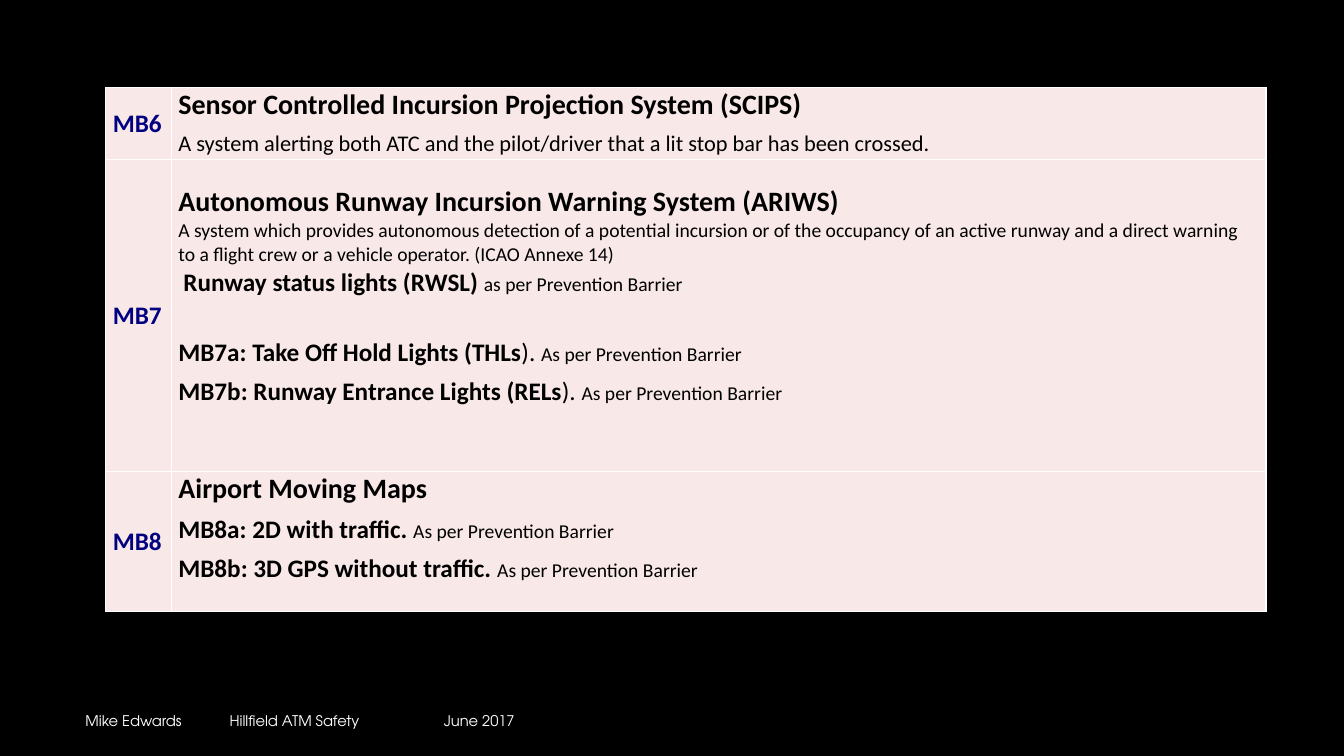
from dataclasses import dataclass

from lxml.etree import SubElement
from pptx import Presentation
from pptx.dml.color import RGBColor
from pptx.enum.text import MSO_ANCHOR, PP_ALIGN
from pptx.oxml.ns import qn
from pptx.util import Pt

BLACK, WHITE, NAVY, PINK = "000000", "FFFFFF", "000080", "F9E8E8"
COLUMN_WIDTHS = (46.8, 781.92)
ROW_HEIGHTS = (51.12, 223.2, 100.08)


@dataclass
class Line:
    """A paragraph of (text, size, bold) phrases with its spacing."""

    phrases: list
    before: float = 3
    after: float = 3
    indent: float = 0
    align: PP_ALIGN = PP_ALIGN.JUSTIFY


def plain(*phrases, indent=0):
    """Return a left-aligned line without spacing."""
    return Line(list(phrases), 0, 0, indent, PP_ALIGN.LEFT)


def option(name, ending, before=3, note="As per Prevention Barrier"):
    """Return a line with a bold name and a smaller note."""
    return Line([(name, 18, True), (ending, 18, False), (note, 14, False)], before)


BARRIERS = [
    ("MB6", 0, [
        Line([("Sensor Controlled Incursion Projection System (SCIPS)", 20, True)], 0),
        Line([("A system alerting both ATC and the pilot/driver that a lit stop bar "
               "has been crossed.", 16, False)], after=0),
    ]),
    ("MB7", 18.4, [
        plain(("Autonomous Runway Incursion Warning System (ARIWS)", 20, True)),
        plain(("A system which provides autonomous detection of a potential incursion "
               "or of the occupancy of an active runway and a direct warning to a "
               "flight crew or a vehicle operator. (ICAO Annexe 14)", 14, False)),
        plain(("Runway status lights (RWSL) ", 18, True),
              ("as per Prevention Barrier", 14, False), indent=3.6),
        option("MB7a: Take Off Hold Lights (THLs", "). ", before=28.5),
        option("MB7b: Runway Entrance Lights (RELs", "). "),
    ]),
    ("MB8", 0, [
        Line([("Airport Moving Maps", 20, True)], 0),
        option("MB8a: 2D with traffic.", " "),
        Line([("MB8b: 3D GPS without traffic. ", 18, True),
              ("As per Prevention Barrier", 14, False)]),
    ]),
]


def paint(target, color):
    """Give a fill or a font a solid colour."""
    if hasattr(target, "solid"):
        target.solid()
        target.fore_color.rgb = RGBColor.from_string(color)
    else:
        target.color.rgb = RGBColor.from_string(color)


def style(run, size, color, bold=False, face="Calibri"):
    """Format one run."""
    run.font.size = Pt(size)
    run.font.bold = bold
    run.font.name = face
    paint(run.font, color)


def write(paragraph, line, color):
    """Fill a paragraph with the phrases of a line."""
    paragraph.alignment = line.align
    paragraph.space_before = Pt(line.before)
    paragraph.space_after = Pt(line.after)
    if line.indent:
        paragraph._p.get_or_add_pPr().set("marL", str(Pt(line.indent)))
    for text, size, bold in line.phrases:
        run = paragraph.add_run()
        run.text = text
        style(run, size, color, bold)


def add_borders(cell, color, width):
    """Draw the four borders of a cell."""
    properties = cell._tc.get_or_add_tcPr()
    for side in ("a:lnL", "a:lnR", "a:lnT", "a:lnB"):
        border = SubElement(properties, qn(side), w=str(Pt(width)))
        fill = SubElement(border, qn("a:solidFill"))
        SubElement(fill, qn("a:srgbClr"), val=color)


def fill_cell(cell, lines, color, anchor, top=0):
    """Format a cell and write its lines."""
    add_borders(cell, WHITE, 1)
    paint(cell.fill, PINK)
    cell.vertical_anchor = anchor
    cell.margin_left = cell.margin_right = Pt(5.04)
    cell.margin_top, cell.margin_bottom = Pt(top), Pt(0)
    frame = cell.text_frame
    for index, line in enumerate(lines):
        write(frame.add_paragraph() if index else frame.paragraphs[0], line, color)


def add_barrier_table(slide):
    """Add the table of mitigation barriers."""
    table = slide.shapes.add_table(
        len(BARRIERS), 2, Pt(75.6), Pt(62.64),
        Pt(sum(COLUMN_WIDTHS)), Pt(sum(ROW_HEIGHTS))).table
    table.first_row = table.horz_banding = False
    for column, width in zip(table.columns, COLUMN_WIDTHS):
        column.width = Pt(width)
    for index, (code, top, lines) in enumerate(BARRIERS):
        table.rows[index].height = Pt(ROW_HEIGHTS[index])
        fill_cell(table.cell(index, 0), [plain((code, 18, True))], NAVY,
                  MSO_ANCHOR.MIDDLE)
        fill_cell(table.cell(index, 1), lines, BLACK, MSO_ANCHOR.TOP, top)


def add_footer(slide, entries, stops):
    """Add the footer entries, set apart by tab stops."""
    frame = slide.shapes.add_textbox(Pt(54), Pt(500.4), Pt(612), Pt(28.8)).text_frame
    frame.word_wrap = True
    frame.vertical_anchor = MSO_ANCHOR.MIDDLE
    credit = frame.paragraphs[0]
    tabs = SubElement(credit._p.get_or_add_pPr(), qn("a:tabLst"))
    for stop in stops:
        SubElement(tabs, qn("a:tab"), pos=str(Pt(stop)), algn="l")
    credit.text = "\t".join(entries)
    for run in credit.runs:
        style(run, 10.5, WHITE, face="TeX Gyre Adventor")


def main():
    """Build the slide and save it."""
    deck = Presentation()
    deck.slide_width, deck.slide_height = Pt(960), Pt(540)
    slide = deck.slides.add_slide(deck.slide_layouts[6])
    paint(slide.background.fill, BLACK)
    add_barrier_table(slide)
    add_footer(slide, ["Mike Edwards", "Hillfield ATM Safety", "June 2017"], (103, 256))
    deck.save("out.pptx")


if __name__ == "__main__":
    main()
